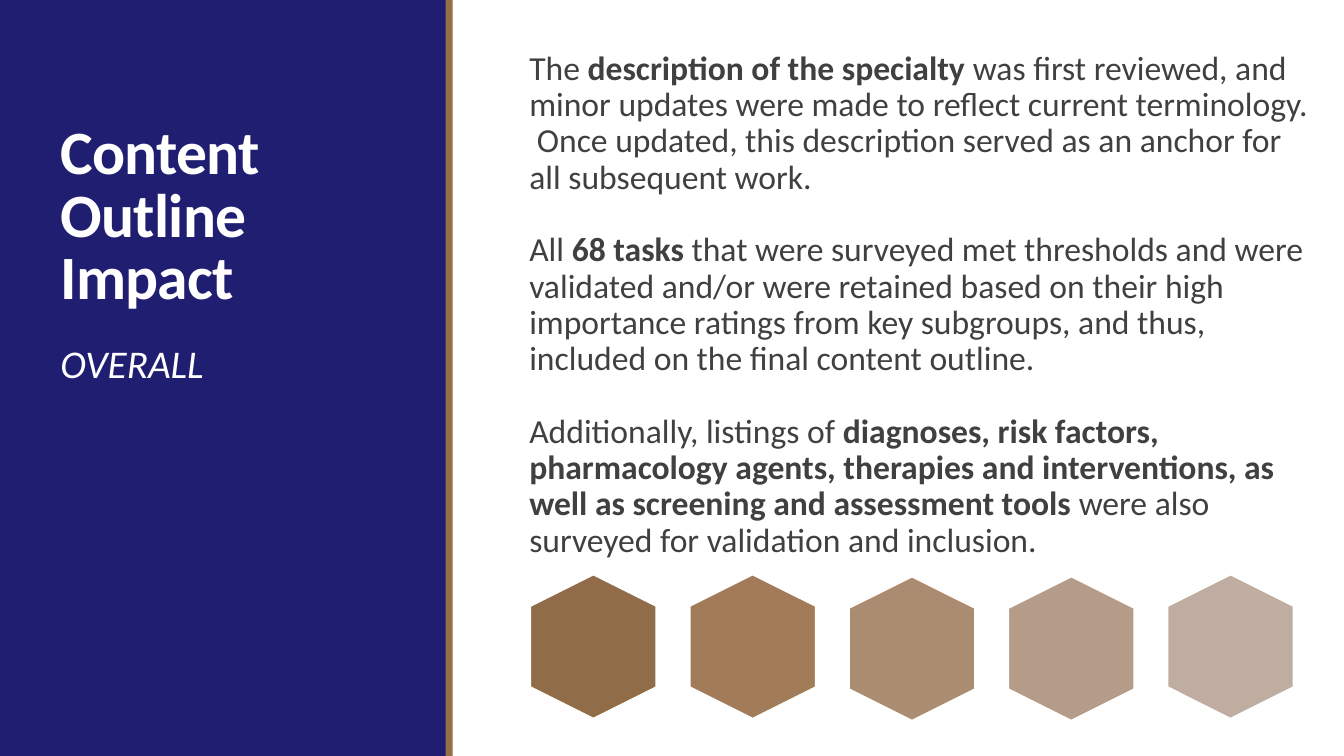
from dataclasses import dataclass

from pptx import Presentation
from pptx.dml.color import RGBColor
from pptx.enum.shapes import MSO_SHAPE
from pptx.enum.text import MSO_ANCHOR
from pptx.util import Inches, Pt


@dataclass(frozen=True)
class Theme:
    font: str = "Calibri"
    navy: str = "201E70"
    bronze: str = "956F47"
    white: str = "FFFFFF"
    ink: str = "404040"
    hexagons: tuple = ("906C48", "A27C58", "AB8C70", "B49C88", "BEADA0")
    title_size: int = 44
    subtitle_size: int = 28
    body_size: int = 24


THEME = Theme()

# Each paragraph is a list of (text, bold) spans.
FINDINGS = [
    [("The ", False), ("description of the specialty ", True),
     ("was first reviewed, and minor updates were made to reflect current terminology.  "
      "Once updated, this description served as an anchor for all subsequent work.", False)],
    [("All ", False), ("68 tasks ", True),
     ("that were surveyed met thresholds and were validated and/or were retained based on "
      "their high importance ratings from key subgroups, and thus, included on the final "
      "content outline.", False)],
    [("Additionally, listings of ", False),
     ("diagnoses, risk factors, pharmacology agents, therapies and interventions, as well "
      "as screening and assessment tools ", True),
     ("were also surveyed for validation and inclusion.", False)],
]


def set_all(target, values):
    for name, value in values.items():
        setattr(target, name, value)


def add_filled(page, kind, box, color):
    shape = page.shapes.add_shape(kind, *map(Inches, box))
    shape.shadow.inherit = False
    shape.fill.solid()
    shape.fill.fore_color.rgb = RGBColor.from_string(color)
    shape.line.fill.background()
    return shape


def add_text(page, box, paragraphs, color, font, spacing, frame=None, tracking=None):
    """Write paragraphs of (text, bold) spans; frame holds text frame settings."""
    text_frame = page.shapes.add_textbox(*map(Inches, box)).text_frame
    set_all(text_frame, {"word_wrap": True, **(frame or {})})
    for index, spans in enumerate(paragraphs):
        para = text_frame.add_paragraph() if index else text_frame.paragraphs[0]
        set_all(para, spacing)
        if index == 0:
            para.space_before = Pt(0)
        for text, bold in spans:
            span = para.add_run()
            span.text = text
            set_all(span.font, {"name": THEME.font, "bold": bold, **font})
            span.font.color.rgb = RGBColor.from_string(color)
            if tracking is not None:
                span.font._element.set("spc", str(tracking))


def add_side_panel(page, box):
    left, top, width, height = box
    add_filled(page, MSO_SHAPE.RECTANGLE, box, THEME.navy)
    add_filled(page, MSO_SHAPE.RECTANGLE, (left + width - 0.01, top, 0.07, height), THEME.bronze)
    add_text(page, (left + 0.5, top + 0.65, 3.5, 2.5), [[("Content Outline Impact", True)]],
             THEME.white, {"size": Pt(THEME.title_size)}, {"line_spacing": 0.85},
             {"vertical_anchor": MSO_ANCHOR.BOTTOM}, tracking=-50)
    add_text(page, (left + 0.5, top + 3.37, 3.5, 3.53), [[("OVERALL", False)]],
             THEME.white, {"size": Pt(THEME.subtitle_size), "italic": True},
             {"line_spacing": 0.9})


def add_findings(page, box):
    add_text(page, box, FINDINGS, THEME.ink, {"size": Pt(THEME.body_size)},
             {"line_spacing": 0.9, "space_before": Pt(26)},
             {"margin_left": 0, "margin_right": 0})


def add_hexagon_row(page, box):
    """Spread upright hexagons evenly from the left to the right edge of the box."""
    left, top, width, height = box
    across = 1.25
    step = (width - across) / (len(THEME.hexagons) - 1)
    for index, color in enumerate(THEME.hexagons):
        drop = 0.02 if index in (2, 3) else 0
        center_x = left + across / 2 + index * step
        center_y = top + height / 2 + drop
        hexagon = add_filled(page, MSO_SHAPE.HEXAGON,
                             (center_x - height / 2, center_y - across / 2, height, across), color)
        hexagon.rotation = 90
        hexagon.adjustments[0] = 0.25
        hexagon.line.color.rgb = RGBColor.from_string(THEME.white)
        hexagon.line.width = Pt(1.25)


def main():
    deck = Presentation()
    set_all(deck, {"slide_width": Inches(13.33), "slide_height": Inches(7.5)})
    page = deck.slides.add_slide(deck.slide_layouts[6])
    add_side_panel(page, (0, 0, 4.43, 7.5))
    add_findings(page, (5.25, 0.46, 7.74, 5.24))
    add_hexagon_row(page, (5.26, 5.7, 7.57, 1.43))
    deck.save("out.pptx")


if __name__ == "__main__":
    main()
